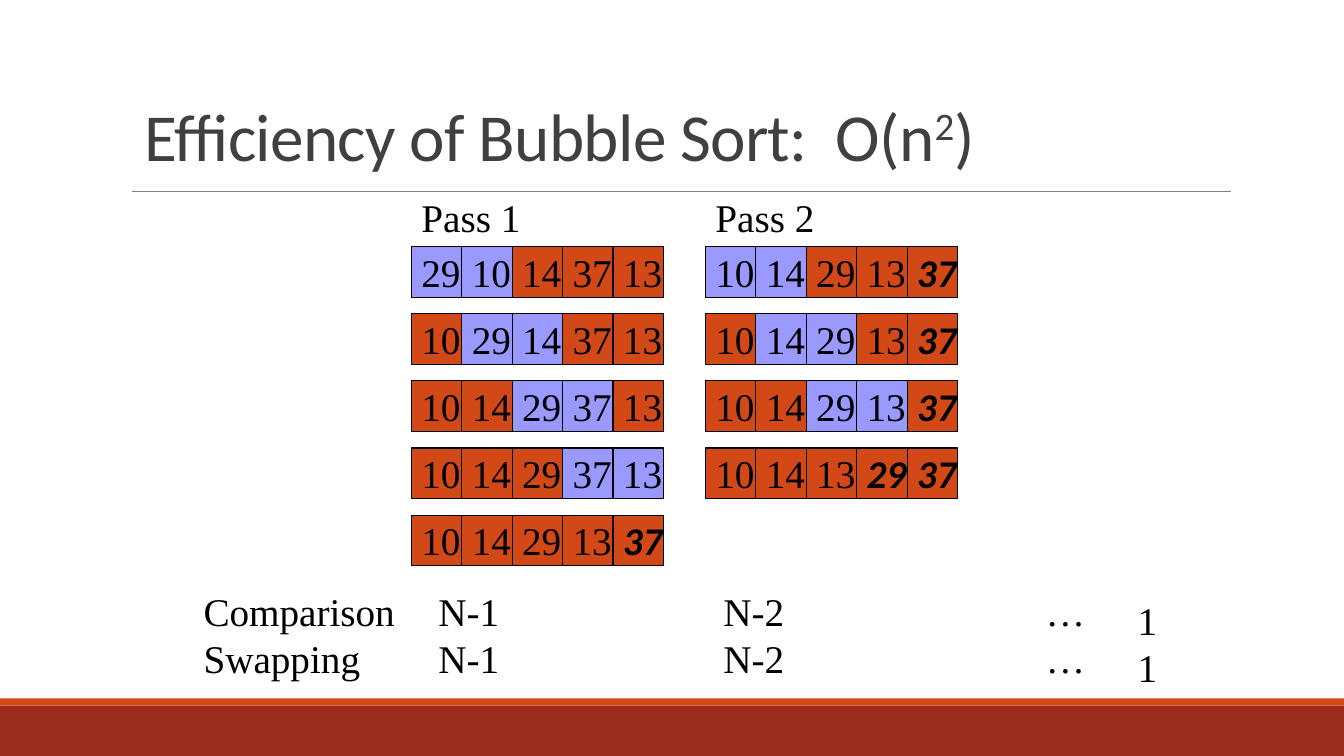
import pptx
import pptx.dml.color
import pptx.enum.shapes
import pptx.enum.text
import pptx.oxml.ns
import pptx.util
from lxml import etree

Cm = pptx.util.Cm
Pt = pptx.util.Pt
RGB = pptx.dml.color.RGBColor
ANCHOR = pptx.enum.text.MSO_ANCHOR
FIT = pptx.enum.text.MSO_AUTO_SIZE
ALIGN = pptx.enum.text.PP_ALIGN

BLACK = RGB(0x00, 0x00, 0x00)
GREY = RGB(0x40, 0x40, 0x40)
RULE = RGB(0x80, 0x80, 0x80)
BLUE = RGB(0x99, 0x99, 0xFF)
ORANGE = RGB(0xD3, 0x48, 0x17)
RED = RGB(0x9B, 0x2D, 0x1F)

SERIF = "Times New Roman"
SANS = "Calibri"

CELL = 1.27
PITCH = 1.69
TOP = 6.22
START = [29, 10, 14, 37, 13]
LEFTS = [10.37, 17.78]

# left, top, width, lines
COUNTS = [
    (4.88, 14.68, 5.33, ["Comparison", "Swapping"]),
    (10.8, 14.68, 2.06, ["N-1", "N-1"]),
    (17.98, 14.68, 2.06, ["N-2", "N-2"]),
    (26.11, 14.68, 1.27, ["…", "…"]),
    (28.42, 14.9, 1.02, ["1", "1"]),
]


def style(para, name=SERIF, size=28, color=BLACK):
    para.font.name = name
    para.font.size = Pt(size)
    para.font.color.rgb = color


def add_box(slide, left, top, width, height, fill):
    """Add a plain filled rectangle without an outline."""
    box = slide.shapes.add_shape(
        pptx.enum.shapes.MSO_SHAPE.RECTANGLE,
        Cm(left), Cm(top), Cm(width), Cm(height))
    box.shadow.inherit = False
    box.fill.solid()
    box.fill.fore_color.rgb = fill
    box.line.fill.background()
    return box


def add_rule(slide, left, right, top):
    rule = slide.shapes.add_connector(
        pptx.enum.shapes.MSO_CONNECTOR.STRAIGHT,
        Cm(left), Cm(top), Cm(right), Cm(top))
    rule.line.color.rgb = RULE
    rule.line.width = Pt(0.5)
    etree.SubElement(rule._element.spPr, pptx.oxml.ns.qn("a:effectLst"))


def add_title(slide):
    title = slide.shapes.title
    title.left, title.top = Cm(3.39), Cm(1.35)
    title.width, title.height = Cm(21.59), Cm(3.18)
    frame = title.text_frame
    frame.auto_size = FIT.NONE
    frame.vertical_anchor = ANCHOR.BOTTOM
    para = frame.paragraphs[0]
    para.alignment = ALIGN.LEFT
    para.line_spacing = 0.85
    style(para, SANS, 48, GREY)
    for text, base in [("Efficiency of Bubble Sort:  O(n", 0),
                       ("2", 30000), (")", 0)]:
        run = para.add_run()
        run.text = text
        props = run._r.get_or_add_rPr()
        props.set("spc", "-50")
        if base:
            props.set("baseline", str(base))


def add_text(slide, left, top, width, lines):
    box = slide.shapes.add_textbox(
        Cm(left), Cm(top), Cm(width), Cm(0.25 + 1.18 * len(lines)))
    frame = box.text_frame
    frame.word_wrap = False
    frame.text = "\n".join(lines)
    for para in frame.paragraphs:
        style(para)


def add_cell(slide, left, top, value, fill, done):
    cell = add_box(slide, left, top, CELL, CELL, fill)
    cell.line.color.rgb = BLACK
    cell.line.width = Pt(0.75)
    frame = cell.text_frame
    frame.word_wrap = False
    frame.margin_right = 0
    frame.vertical_anchor = ANCHOR.MIDDLE
    frame.text = str(value)
    para = frame.paragraphs[0]
    para.alignment = ALIGN.LEFT
    style(para, SANS if done else SERIF)
    if done:
        para.font.bold = para.font.italic = True


def add_row(slide, left, step, items, pair, done):
    """Draw one step: blue for the compared pair, bold for the sorted tail."""
    for col, value in enumerate(items):
        add_cell(slide, left + col * CELL, TOP + step * PITCH, value,
                 BLUE if col in pair else ORANGE, col >= len(items) - done)


def add_pass(slide, left, done, items):
    """Draw one pass of the sort, putting the items in order as it goes."""
    add_text(slide, left, 4.75, 3, [f"Pass {done + 1}"])
    last = len(items) - 1 - done
    for i in range(last):
        add_row(slide, left, i, items, (i, i + 1), done)
        items[i:i + 2] = sorted(items[i:i + 2])
    add_row(slide, left, last, items, (), done + 1)


def main():
    deck = pptx.Presentation()
    deck.slide_width, deck.slide_height = Cm(33.87), Cm(19.05)
    slide = deck.slides.add_slide(deck.slide_layouts[5])
    add_box(slide, 0, 17.78, 33.87, 1.27, RED)
    add_box(slide, 0, 17.6, 33.87, 0.18, ORANGE)
    add_rule(slide, 3.33, 31.01, 4.83)
    add_title(slide)
    items = list(START)
    for done, left in enumerate(LEFTS):
        add_pass(slide, left, done, items)
    for left, top, width, lines in COUNTS:
        add_text(slide, left, top, width, lines)
    deck.save("out.pptx")


if __name__ == "__main__":
    main()
